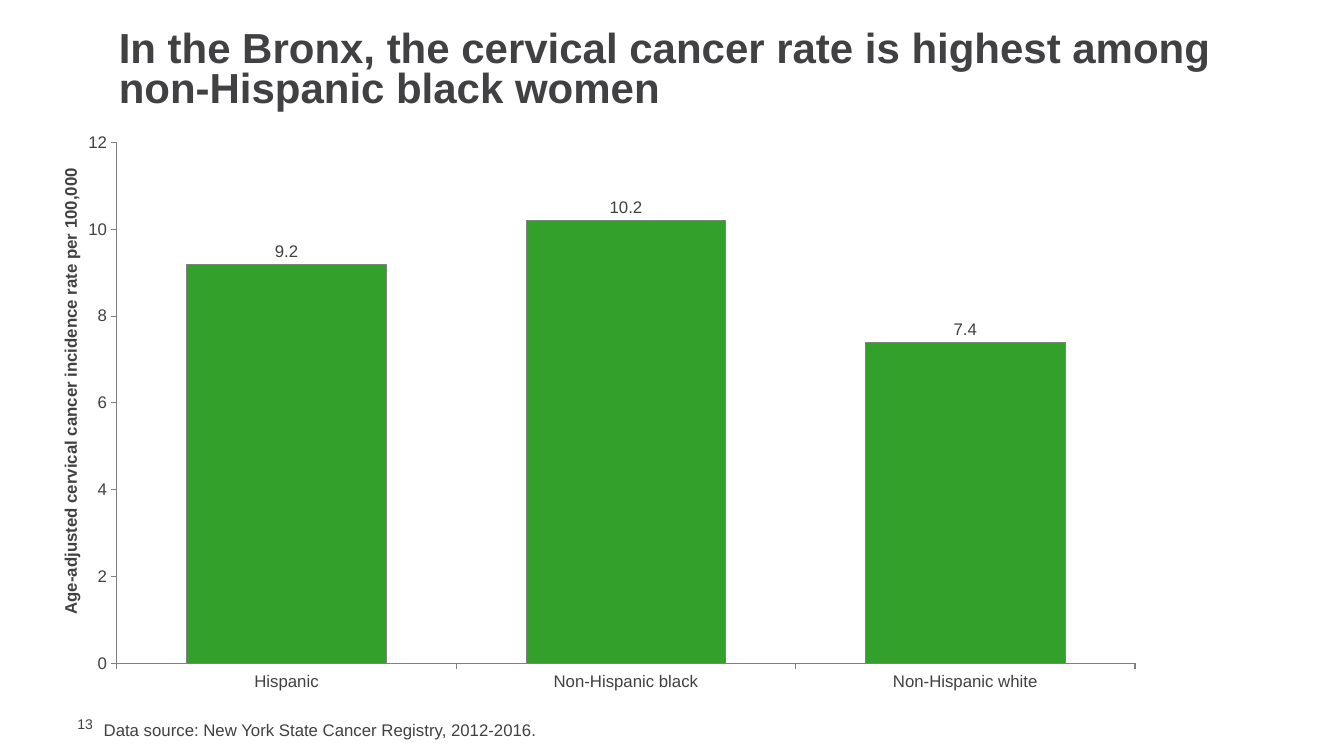
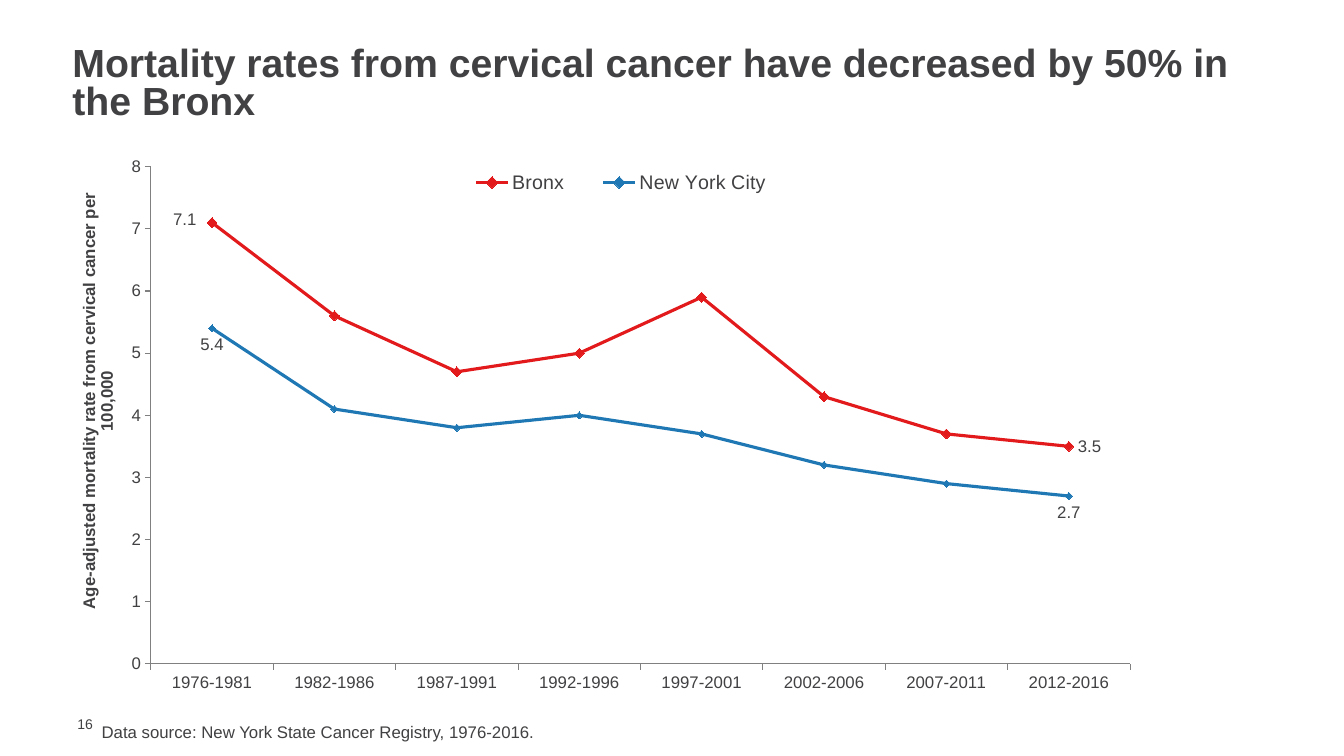
import lxml.etree
import pptx
import pptx.chart.data
import pptx.dml.color
import pptx.enum.chart
import pptx.enum.text
import pptx.oxml.ns
import pptx.util

Inches = pptx.util.Inches
Pt = pptx.util.Pt
ChartType = pptx.enum.chart.XL_CHART_TYPE
LabelPosition = pptx.enum.chart.XL_LABEL_POSITION
COLORS = {
    name: pptx.dml.color.RGBColor.from_string(value)
    for name, value in {
        "background": "FFFFFF", "text": "414042", "axis": "808080",
        "green": "33A02C", "red": "E31A1C", "blue": "1F78B4",
    }.items()
}
FONT = "Arial"


def add_text(slide, text, box, size, bold=False, middle=False, number=False):
    shape = slide.shapes.add_textbox(*(Inches(length) for length in box))
    frame = shape.text_frame
    frame.word_wrap = True
    if middle:
        frame.vertical_anchor = pptx.enum.text.MSO_ANCHOR.MIDDLE
    if number:
        frame.margin_top = frame.margin_right = frame.margin_bottom = 0
    frame.text = text
    paragraph = frame.paragraphs[0]
    if bold:
        paragraph.line_spacing = 0.8
    font = paragraph.runs[0].font
    font.name, font.size, font.bold = FONT, Pt(size), bold
    font.color.rgb = COLORS["text"]


def set_layout(element, index, **settings):
    for old_layout in element.findall(pptx.oxml.ns.qn("c:layout")):
        element.remove(old_layout)
    layout = lxml.etree.Element(pptx.oxml.ns.qn("c:layout"))
    manual = lxml.etree.SubElement(layout, pptx.oxml.ns.qn("c:manualLayout"))
    for tag, value in settings.items():
        lxml.etree.SubElement(manual, pptx.oxml.ns.qn(f"c:{tag}")).set("val", str(value))
    element.insert(index, layout)


SLIDES = [
    {
        "number": "13",
        "title": "In the Bronx, the cervical cancer rate is highest among non-Hispanic black women",
        "title_box": (1.08, 0.25, 11.17, 0.91),
        "title_size": 30,
        "source": "Data source: New York State Cancer Registry, 2012-2016.",
        "source_box": (0.93, 7.09, 9.92, 0.3),
        "chart_type": ChartType.COLUMN_CLUSTERED,
        "chart_box": (0.5, 1.25, 11, 5.72),
        "plot": {"x": 0.06, "y": 0.029, "w": 0.918, "h": 0.903},
        "axis_title": "Age-adjusted cervical cancer incidence rate per 100,000",
        "axis_title_at": {"x": 0.006, "y": 0.068},
        "maximum": 12,
        "unit": 2,
        "categories": ["Hispanic", "Non-Hispanic black", "Non-Hispanic white"],
        "series": {"Series 1": [9.2, 10.2, 7.4]},
    },
    {
        "number": "16",
        "title": "Mortality rates from cervical cancer have decreased by 50% in the Bronx",
        "title_box": (0.62, 0.42, 12.08, 0.85),
        "title_size": 28,
        "source": "Data source: New York State Cancer Registry, 1976-2016.",
        "source_box": (0.91, 7.11, 9.92, 0.3),
        "chart_type": ChartType.LINE_MARKERS,
        "chart_box": (0.33, 1.56, 11, 5.58),
        "plot": {"x": 0.106, "y": 0.017, "w": 0.883, "h": 0.884},
        "axis_title": "Age-adjusted mortality rate from cervical cancer per 100,000",
        "axis_title_at": {"x": 0.038, "y": 0.058},
        "maximum": 8,
        "unit": 1,
        "categories": ["1976-1981", "1982-1986", "1987-1991", "1992-1996",
                       "1997-2001", "2002-2006", "2007-2011", "2012-2016"],
        "series": {
            "Bronx": [7.1, 5.6, 4.7, 5, 5.9, 4.3, 3.7, 3.5],
            "New York City": [5.4, 4.1, 3.8, 4, 3.7, 3.2, 2.9, 2.7],
        },
    },
]

presentation = pptx.Presentation()
presentation.slide_width = Inches(13.33)
presentation.slide_height = Inches(7.5)
background = presentation.slide_master.background.fill
background.solid()
background.fore_color.rgb = COLORS["background"]

charts = []
for content in SLIDES:
    slide = presentation.slides.add_slide(presentation.slide_layouts[6])
    add_text(slide, content["number"], (0.67, 7.1, 0.43, 0.17), 10, middle=True, number=True)
    add_text(slide, content["title"], content["title_box"], content["title_size"],
             bold=True, middle=True)
    add_text(slide, content["source"], content["source_box"], 12)

    chart_data = pptx.chart.data.CategoryChartData()
    chart_data.categories = content["categories"]
    for name, values in content["series"].items():
        chart_data.add_series(name, values)
    chart_box = [Inches(length) for length in content["chart_box"]]
    chart = slide.shapes.add_chart(content["chart_type"], *chart_box, chart_data).chart
    charts.append(chart)
    chart.has_title = False
    chart.has_legend = False
    chart.font.name, chart.font.size = FONT, Pt(10)
    chart.font.color.rgb = COLORS["text"]
    chart.plots[0].vary_by_categories = False
    plot_area = chart.plots[0]._element.getparent()
    set_layout(plot_area, 0, layoutTarget="inner", xMode="edge", yMode="edge", **content["plot"])

    for axis in (chart.category_axis, chart.value_axis):
        axis.has_major_gridlines = False
        axis.major_tick_mark = pptx.enum.chart.XL_TICK_MARK.OUTSIDE
        axis.minor_tick_mark = pptx.enum.chart.XL_TICK_MARK.NONE
        axis.format.line.color.rgb = COLORS["axis"]
        axis.format.line.width = Pt(0.75)
        font = axis.tick_labels.font
        font.name, font.size = FONT, Pt(12)
        font.color.rgb = COLORS["text"]

    value_axis = chart.value_axis
    value_axis.minimum_scale = 0
    value_axis.maximum_scale = content["maximum"]
    value_axis.major_unit = content["unit"]
    value_axis.tick_labels.number_format = "0"
    value_axis.tick_labels.number_format_is_linked = False
    axis_title = value_axis.axis_title
    axis_title.text_frame.text = content["axis_title"]
    axis_title.text_frame._txBody.bodyPr.set("rot", "-5400000")
    axis_title.text_frame._txBody.bodyPr.set("vert", "horz")
    font = axis_title.text_frame.paragraphs[0].runs[0].font
    font.name, font.size, font.bold = FONT, Pt(12), True
    font.color.rgb = COLORS["text"]
    set_layout(axis_title._element, 1, xMode="edge", yMode="edge", **content["axis_title_at"])

column_chart, line_chart = charts

column_plot = column_chart.plots[0]
column_plot.gap_width = 70
columns = column_plot.series[0]
columns.format.fill.solid()
columns.format.fill.fore_color.rgb = COLORS["green"]
columns.format.line.color.rgb = COLORS["axis"]
columns.format.line.width = Pt(0.75)
labels = columns.data_labels
labels.show_value = True
labels.position = LabelPosition.OUTSIDE_END
labels.font.name, labels.font.size = FONT, Pt(12)
labels.font.color.rgb = COLORS["text"]

line_chart.has_legend = True
legend = line_chart.legend
legend.position = pptx.enum.chart.XL_LEGEND_POSITION.TOP
legend.include_in_layout = False
legend.font.name, legend.font.size = FONT, Pt(14)
legend.font.color.rgb = COLORS["text"]
set_layout(legend._element, 1, xMode="edge", yMode="edge", x=0.37, y=0.01, w=0.32, h=0.07)

line_styles = [
    ("red", 7, {0: LabelPosition.LEFT, 7: LabelPosition.RIGHT}),
    ("blue", 5, {0: LabelPosition.BELOW, 7: LabelPosition.BELOW}),
]
for series, (color, marker_size, positions) in zip(line_chart.plots[0].series, line_styles):
    series.smooth = False
    series.format.line.color.rgb = COLORS[color]
    series.format.line.width = Pt(2.25)
    series.marker.style = pptx.enum.chart.XL_MARKER_STYLE.DIAMOND
    series.marker.size = marker_size
    series.marker.format.fill.solid()
    series.marker.format.fill.fore_color.rgb = COLORS[color]
    series.marker.format.line.color.rgb = COLORS[color]
    series.data_labels.show_value = False
    for index, position in positions.items():
        label = series.points[index].data_label
        label.font.name, label.font.size = FONT, Pt(12)
        label.font.color.rgb = COLORS["text"]
        label.position = position

first_label = line_chart.plots[0].series[0]._element.find(".//" + pptx.oxml.ns.qn("c:dLbl"))
set_layout(first_label, 1, x=-0.006, y=-0.005)

presentation.save("out.pptx")
